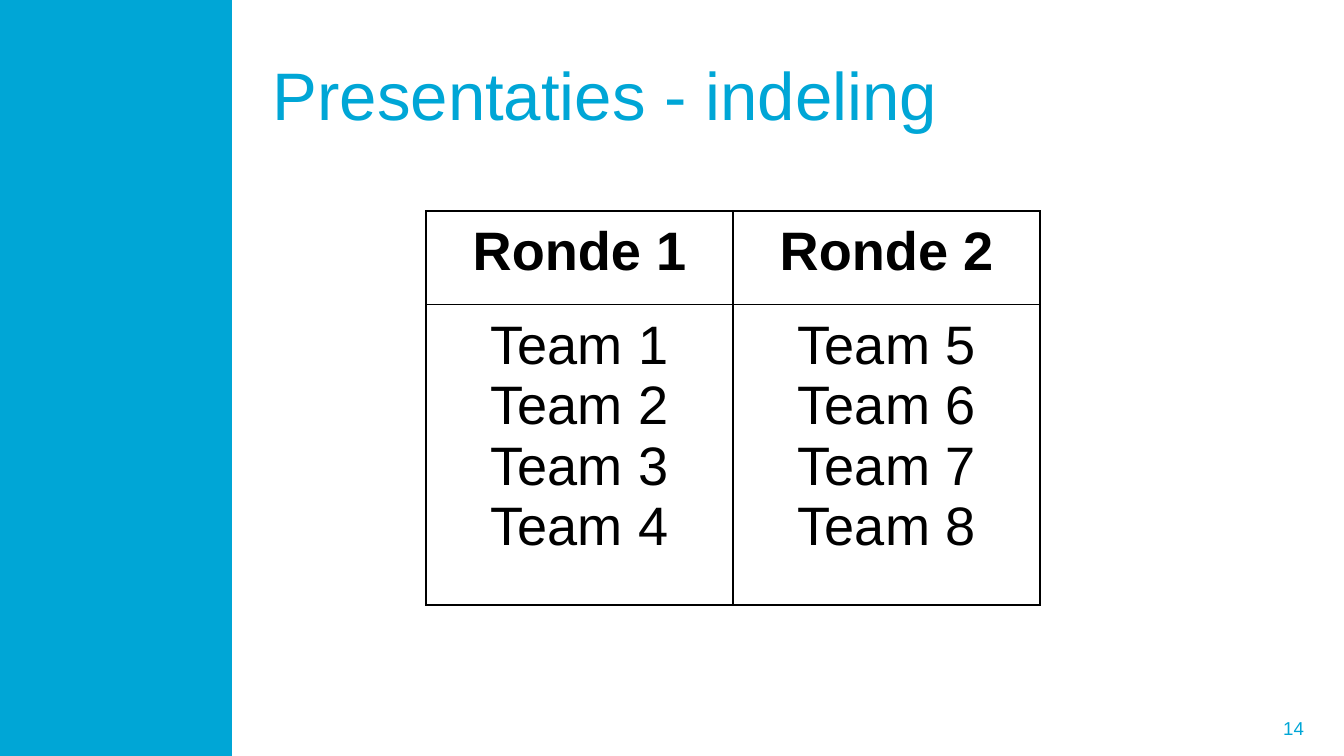
from lxml import etree
from pptx import Presentation
from pptx.dml.color import RGBColor
from pptx.enum.shapes import MSO_SHAPE
from pptx.enum.text import MSO_ANCHOR, PP_ALIGN
from pptx.oxml.ns import qn
from pptx.util import Inches, Pt

RECT = MSO_SHAPE.RECTANGLE
MID = MSO_ANCHOR.MIDDLE
TOP = MSO_ANCHOR.TOP
LEFT, RIGHT, CENTER = PP_ALIGN.LEFT, PP_ALIGN.RIGHT, PP_ALIGN.CENTER

WIDE = Inches(10)
HIGH = WIDE * 9 // 16
FONT = "Arial"
COLORS = {"cyan": "00A6D6", "black": "000000"}
ROUNDS = {
    "Ronde 1": ["Team 1", "Team 2", "Team 3", "Team 4"],
    "Ronde 2": ["Team 5", "Team 6", "Team 7", "Team 8"],
}


def share(*parts):
    return [int(size * part / 100) for part, size in
            zip(parts, (WIDE, HIGH, WIDE, HIGH))]


def write(frame, lines, size, color, align, bold=False):
    for i, line in enumerate(lines):
        para = frame.paragraphs[0] if i == 0 else frame.add_paragraph()
        para.alignment = align
        run = para.add_run()
        run.text = line
        run.font.name = FONT
        run.font.size = Pt(size)
        run.font.bold = bold
        run.font.color.rgb = RGBColor.from_string(COLORS[color])


def add_band(slide, box):
    band = slide.shapes.add_shape(RECT, *box)
    band.shadow.inherit = False
    band.fill.solid()
    band.fill.fore_color.rgb = RGBColor.from_string(COLORS["cyan"])
    band.line.fill.background()


def add_label(slide, box, text, size, align):
    frame = slide.shapes.add_textbox(*box).text_frame
    frame.word_wrap = True
    frame.vertical_anchor = MID
    write(frame, [text], size, "cyan", align)


def add_edges(cell):
    props = cell._tc.get_or_add_tcPr()
    for i, side in enumerate(("lnL", "lnR", "lnT", "lnB")):
        edge = etree.Element(qn("a:" + side), w=str(Pt(1)))
        fill = etree.SubElement(edge, qn("a:solidFill"))
        etree.SubElement(fill, qn("a:srgbClr"), val=COLORS["black"])
        props.insert(i, edge)


def fill_cell(cell, lines, bold):
    cell.fill.background()
    cell.margin_left = cell.margin_right = Inches(0.16)
    cell.margin_top = cell.margin_bottom = Inches(0.08)
    cell.vertical_anchor = TOP
    write(cell.text_frame, lines, 29, "black", CENTER, bold)
    add_edges(cell)


def add_rounds(slide, box):
    table = slide.shapes.add_table(2, len(ROUNDS), *box).table
    table.first_row = table.horz_banding = False
    width, height = box[2:]
    table.rows[0].height = height * 5 // 21
    table.rows[1].height = height - table.rows[0].height
    for col, (name, teams) in enumerate(ROUNDS.items()):
        table.columns[col].width = width // len(ROUNDS)
        fill_cell(table.cell(0, col), [name], True)
        fill_cell(table.cell(1, col), teams, False)


def main():
    deck = Presentation()
    deck.slide_width, deck.slide_height = WIDE, HIGH
    slide = deck.slides.add_slide(deck.slide_layouts[6])
    add_label(slide, share(72.7, 93.7, 25.3, 5.3), "14", 10, RIGHT)
    add_band(slide, share(0, 0, 17.25, 100))
    add_label(slide, share(19.3, 4.1, 77.7, 16.7),
              "Presentaties - indeling", 36, LEFT)
    add_rounds(slide, share(31.7, 27.9, 45.7, 52.1))
    deck.save("out.pptx")


if __name__ == "__main__":
    main()
